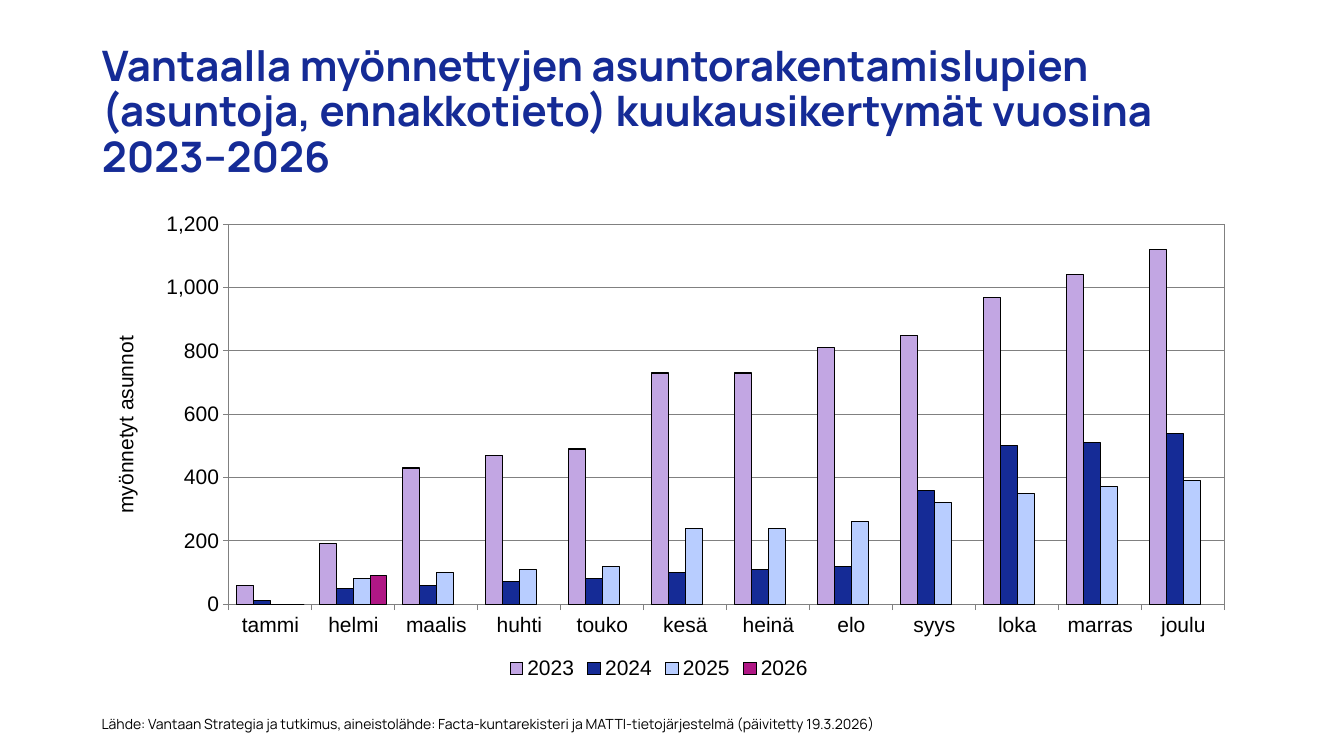
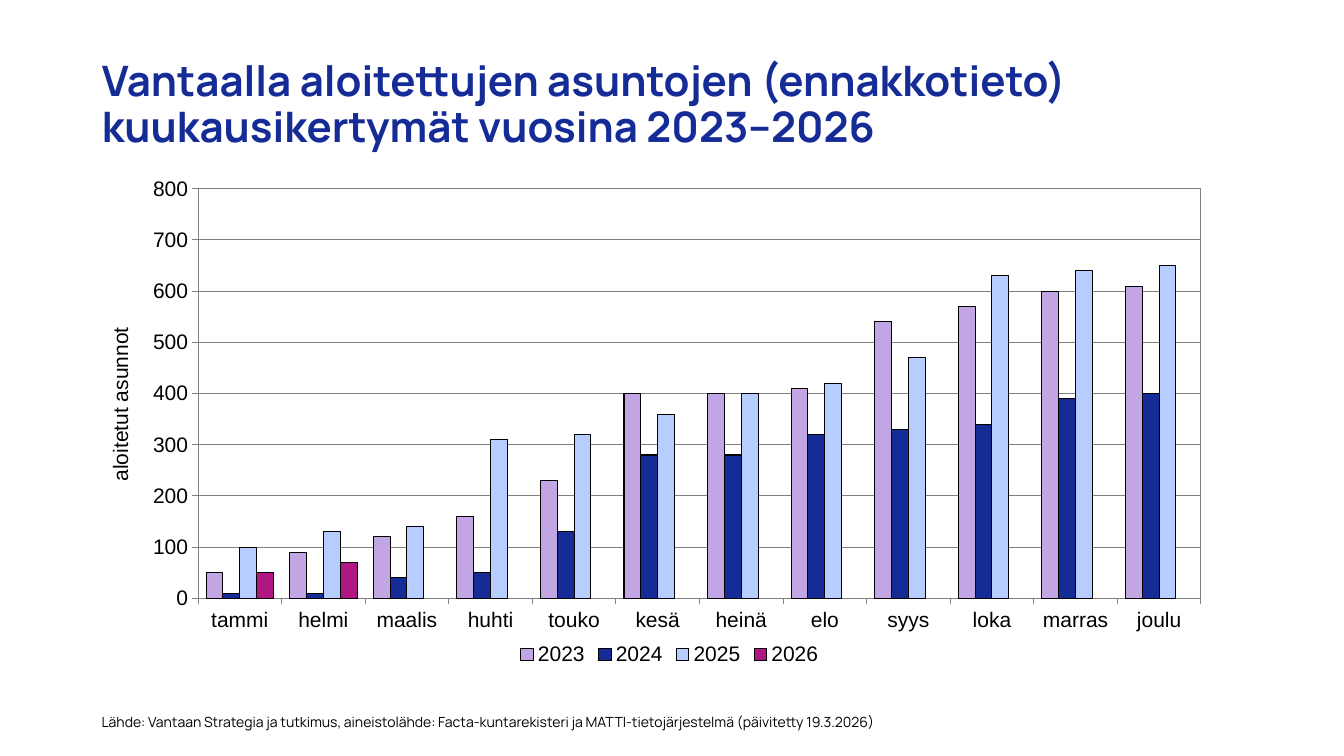
from dataclasses import dataclass

from lxml import etree
from pptx import Presentation
from pptx.chart.data import CategoryChartData
from pptx.dml.color import RGBColor
from pptx.enum.chart import XL_CHART_TYPE, XL_LEGEND_POSITION, XL_TICK_MARK
from pptx.enum.text import MSO_ANCHOR, MSO_AUTO_SIZE, PP_ALIGN
from pptx.oxml import parse_xml
from pptx.oxml.ns import nsdecls, qn
from pptx.util import Inches, Pt

COLUMN = XL_CHART_TYPE.COLUMN_CLUSTERED
BOTTOM = XL_LEGEND_POSITION.BOTTOM
OUT = XL_TICK_MARK.OUTSIDE
MIDDLE, TOP = MSO_ANCHOR.MIDDLE, MSO_ANCHOR.TOP
LEFT = PP_ALIGN.LEFT
FIXED = MSO_AUTO_SIZE.NONE


@dataclass(frozen=True)
class Theme:
    blue: str = "152B96"
    black: str = "000000"
    grey: str = "808080"
    bars: tuple = ("C2A6E3", "152B96", "B8CDFF", "B01785")
    font: str = "Manrope"
    plain: str = "Arial"
    title: int = 30
    label: int = 15
    note: int = 10
    line: float = 0.75


THEME = Theme()
YEARS = ("2023", "2024", "2025", "2026")
MONTHS = ("tammi", "helmi", "maalis", "huhti", "touko", "kesä",
          "heinä", "elo", "syys", "loka", "marras", "joulu")
SOURCE = ("Lähde: Vantaan Strategia ja tutkimus, aineistolähde: Facta-kuntarekisteri "
          "ja MATTI-tietojärjestelmä (päivitetty 19.3.2026)")

PAGES = (
    dict(
        title="Vantaalla myönnettyjen asuntorakentamislupien (asuntoja, ennakkotieto) "
              "kuukausikertymät vuosina 2023–2026",
        head=(0.91, 0.4, 11.5, 1.45),
        foot=(0.91, 7.05, 8.86, 0.4),
        area=(0.91, 2.11, 11.25, 4.68),
        plot=(0.121, 0.024, 0.878, 0.806),
        axis="myönnetyt asunnot", top=1200, step=200,
        rows=(
            (60, 190, 430, 470, 490, 730, 730, 810, 850, 970, 1040, 1120),
            (10, 50, 60, 70, 80, 100, 110, 120, 360, 500, 510, 540),
            (0, 80, 100, 110, 120, 240, 240, 260, 320, 350, 370, 390),
            (0, 90),
        ),
    ),
    dict(
        title="Vantaalla aloitettujen asuntojen (ennakkotieto) "
              "kuukausikertymät vuosina 2023–2026",
        head=(0.91, 0.4, 11.5, 1.3),
        foot=(0.91, 7.03, 9.16, 0.47),
        area=(1.02, 1.7, 11.24, 4.95),
        plot=(0.084, 0.035, 0.885, 0.821),
        axis="aloitetut asunnot", top=800, step=100,
        rows=(
            (50, 90, 120, 160, 230, 400, 400, 410, 540, 570, 600, 610),
            (10, 10, 40, 50, 130, 280, 280, 320, 330, 340, 390, 400),
            (100, 130, 140, 310, 320, 360, 400, 420, 470, 630, 640, 650),
            (50, 70),
        ),
    ),
)


def rgb(color):
    return RGBColor.from_string(color)


def place(box):
    return [Inches(size) for size in box]


def style(font, name, size, color, bold=False):
    font.name, font.size, font.bold = name, Pt(size), bold
    font.color.rgb = rgb(color)


def stroke(line, color):
    line.color.rgb = rgb(color)
    line.width = Pt(THEME.line)


def write(shape, text, size, color, anchor, bold=False):
    frame = shape.text_frame
    frame.text = text
    frame.word_wrap, frame.auto_size = True, FIXED
    frame.vertical_anchor = anchor
    para = frame.paragraphs[0]
    para.alignment = LEFT
    style(para.runs[0].font, THEME.font, size, color, bold)
    return para


def add_title(slide, text, box):
    shape = slide.shapes.title
    shape.left, shape.top, shape.width, shape.height = place(box)
    para = write(shape, text, THEME.title, THEME.blue, MIDDLE, True)
    para.line_spacing = 0.9


def add_note(slide, box):
    shape = slide.shapes.add_textbox(*place(box))
    write(shape, SOURCE, THEME.note, THEME.black, TOP)


def frame_plot(chart, box):
    area = chart.element.find(".//" + qn("c:plotArea"))
    old = area.find(qn("c:layout"))
    if old is not None:
        area.remove(old)
    layout = etree.Element(qn("c:layout"))
    manual = etree.SubElement(layout, qn("c:manualLayout"))
    parts = [("layoutTarget", "inner"), ("xMode", "edge"), ("yMode", "edge")]
    for tag, val in parts + list(zip("xywh", box)):
        etree.SubElement(manual, qn("c:" + tag)).set("val", str(val))
    area.insert(0, layout)
    area.append(parse_xml(
        f'<c:spPr {nsdecls("c", "a")}><a:noFill/><a:ln w="{Pt(THEME.line)}">'
        f'<a:solidFill><a:srgbClr val="{THEME.grey}"/></a:solidFill></a:ln></c:spPr>'))


def set_axes(chart, text, top, step):
    axis = chart.value_axis
    axis.minimum_scale, axis.maximum_scale, axis.major_unit = 0, top, step
    axis.has_major_gridlines = True
    stroke(axis.major_gridlines.format.line, THEME.grey)
    axis.tick_labels.number_format = "#,##0"
    axis.tick_labels.number_format_is_linked = False
    for side in (axis, chart.category_axis):
        side.major_tick_mark = OUT
        stroke(side.format.line, THEME.grey)
    label = axis.axis_title
    label.text_frame.text = text
    font = label.text_frame.paragraphs[0].runs[0].font
    style(font, THEME.plain, THEME.label, THEME.black)
    body = label.element.find(".//" + qn("a:bodyPr"))
    body.set("rot", "-5400000")
    body.set("vert", "horz")


def add_bars(slide, page):
    data = CategoryChartData(number_format="#,##0")
    data.categories = MONTHS
    for year, row in zip(YEARS, page["rows"]):
        data.add_series(year, row + (None,) * (len(MONTHS) - len(row)))
    chart = slide.shapes.add_chart(COLUMN, *place(page["area"]), data).chart
    style(chart.font, THEME.plain, THEME.label, THEME.black)
    chart.has_title = False
    chart.has_legend = True
    chart.legend.position = BOTTOM
    chart.legend.include_in_layout = False
    plot = chart.plots[0]
    plot.gap_width, plot.overlap = 96, 0
    plot.vary_by_categories = False
    for bar, color in zip(plot.series, THEME.bars):
        bar.format.fill.solid()
        bar.format.fill.fore_color.rgb = rgb(color)
        stroke(bar.format.line, THEME.black)
    set_axes(chart, page["axis"], page["top"], page["step"])
    frame_plot(chart, page["plot"])


def main():
    deck = Presentation()
    deck.slide_width, deck.slide_height = Inches(13.33), Inches(7.5)
    for page in PAGES:
        slide = deck.slides.add_slide(deck.slide_layouts[5])
        add_title(slide, page["title"], page["head"])
        add_note(slide, page["foot"])
        add_bars(slide, page)
    deck.save("out.pptx")


if __name__ == "__main__":
    main()
